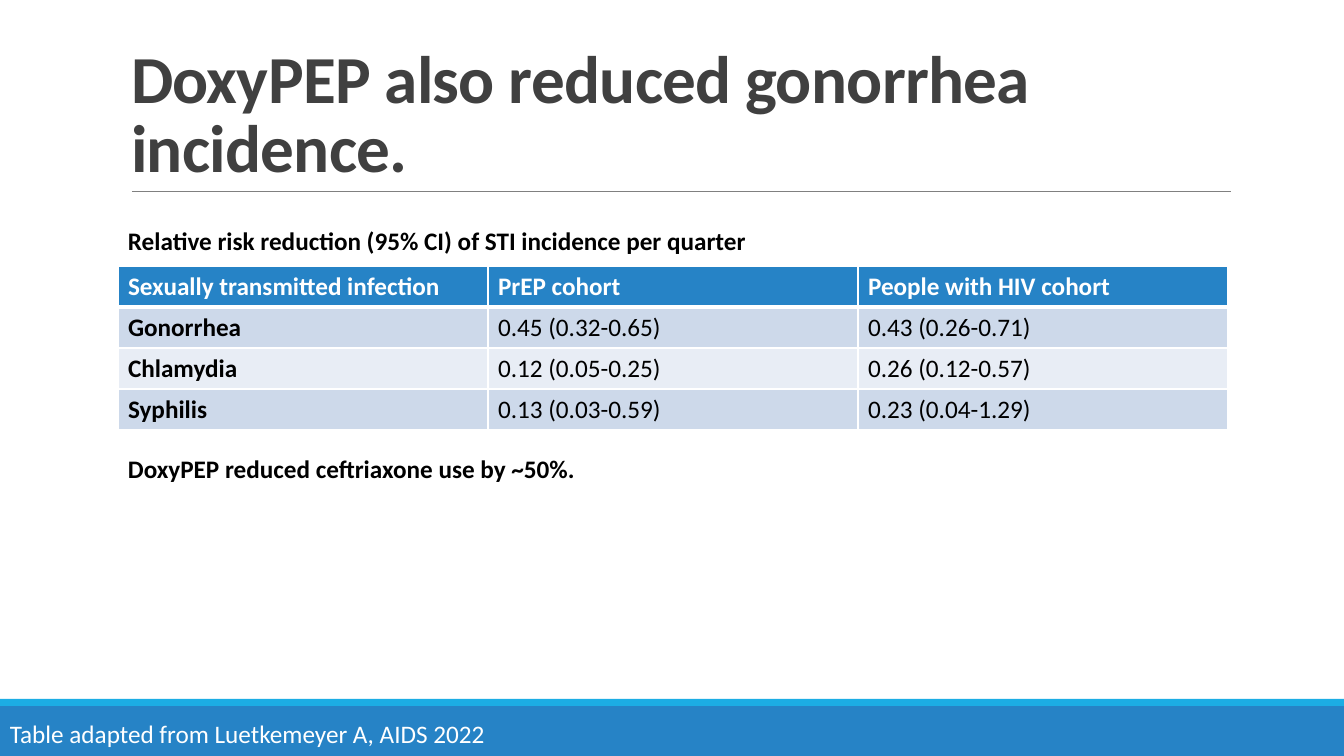
from dataclasses import dataclass
from lxml.etree import SubElement
from pptx import Presentation
from pptx.dml.color import RGBColor
from pptx.enum.shapes import MSO_CONNECTOR as Connector, MSO_SHAPE as Shape
from pptx.enum.text import MSO_ANCHOR as Anchor, MSO_AUTO_SIZE as AutoSize
from pptx.oxml.ns import qn
from pptx.util import Pt

TITLE = "DoxyPEP also reduced gonorrhea incidence."
ROWS = [
    ("Sexually transmitted infection", "PrEP cohort", "People with HIV cohort"),
    ("Gonorrhea", "0.45 (0.32-0.65)", "0.43 (0.26-0.71)"),
    ("Chlamydia", "0.12 (0.05-0.25)", "0.26 (0.12-0.57)"),
    ("Syphilis", "0.13 (0.03-0.59)", "0.23 (0.04-1.29)"),
]


@dataclass(frozen=True)
class Theme:
    font: str = "Calibri"
    title_size: int = 48
    body_size: int = 18
    title: str = "404040"
    ink: str = "000000"
    white: str = "FFFFFF"
    blue: str = "2683C6"
    cyan: str = "1CADE4"
    rule: str = "808080"
    odd_row: str = "CDD9EA"
    even_row: str = "E8EDF5"


THEME = Theme()
NOTES = [
    ("Relative risk reduction (95% CI) of STI incidence per quarter", (118, 220, 1109, 40), THEME.ink, True),
    ("Table adapted from Luetkemeyer A, AIDS 2022", (0, 713, 971, 40), THEME.white, False),
    ("DoxyPEP reduced ceftriaxone use by ~50%.", (118, 448, 1106, 40), THEME.ink, True),
]
BARS = [((0, 706, 1344, 50), THEME.blue), ((0, 699, 1344, 7), THEME.cyan)]
TITLE_BOX = (121, 31, 1109, 160)
RULE = (132, 191, 1231, 191)
TABLE_LEFT, TABLE_TOP, COLUMN_WIDTH, ROW_HEIGHT = 118, 266, 370, 41
SCALE = 914400 / 100.8


def emu(*lengths):
    return [round(length * SCALE) for length in lengths]


def paint(fill, color):
    fill.solid()
    fill.fore_color.rgb = RGBColor.from_string(color)


def write(frame, text, color, bold, size=THEME.body_size):
    para = frame.paragraphs[0]
    span = para.add_run()
    span.text = text
    style = {"name": THEME.font, "size": Pt(size), "bold": bold}
    for key, value in style.items():
        setattr(span.font, key, value)
    span.font.color.rgb = RGBColor.from_string(color)
    return para, span


def add_bars(page):
    for place, color in BARS:
        bar = page.shapes.add_shape(Shape.RECTANGLE, *emu(*place))
        bar.shadow.inherit = False
        paint(bar.fill, color)
        bar.line.fill.background()


def add_rule(page):
    rule = page.shapes.add_connector(Connector.STRAIGHT, *emu(*RULE))
    rule.line.width = Pt(0.5)
    paint(rule.line.fill, THEME.rule)
    SubElement(rule._element.spPr, qn("a:effectLst"))


def fill_title(page):
    title = page.shapes.title
    title.left, title.top, title.width, title.height = emu(*TITLE_BOX)
    frame = title.text_frame
    frame.vertical_anchor = Anchor.BOTTOM
    frame.auto_size = AutoSize.NONE
    para, span = write(frame, TITLE, THEME.title, True, THEME.title_size)
    para.alignment = 1
    para.line_spacing = 0.85
    span.font._element.set("spc", "-50")


def add_borders(cell, bottom):
    properties = cell._tc.get_or_add_tcPr()
    for side, points in {"L": 1, "R": 1, "T": 1, "B": bottom}.items():
        line = SubElement(properties, qn(f"a:ln{side}"), w=str(Pt(points)))
        color = SubElement(line, qn("a:solidFill"))
        SubElement(color, qn("a:srgbClr"), val=THEME.white)


def add_results(page):
    columns = len(ROWS[0])
    place = emu(TABLE_LEFT, TABLE_TOP, COLUMN_WIDTH * columns, ROW_HEIGHT * len(ROWS))
    table = page.shapes.add_table(len(ROWS), columns, *place).table
    for row, values in enumerate(ROWS):
        header = row == 0
        stripe = THEME.odd_row if row % 2 else THEME.even_row
        for column, text in enumerate(values):
            cell = table.cell(row, column)
            add_borders(cell, 3 if header else 1)
            paint(cell.fill, THEME.blue if header else stripe)
            write(cell.text_frame, text, THEME.white if header else THEME.ink, header or column == 0)


def add_notes(page):
    for text, place, color, bold in NOTES:
        frame = page.shapes.add_textbox(*emu(*place)).text_frame
        frame.word_wrap = True
        frame.auto_size = AutoSize.SHAPE_TO_FIT_TEXT
        write(frame, text, color, bold)


def main():
    deck = Presentation()
    deck.slide_width, deck.slide_height = emu(1344, 756)
    page = deck.slides.add_slide(deck.slide_layouts[5])
    add_bars(page)
    add_rule(page)
    fill_title(page)
    add_results(page)
    add_notes(page)
    deck.save("out.pptx")


if __name__ == "__main__":
    main()
